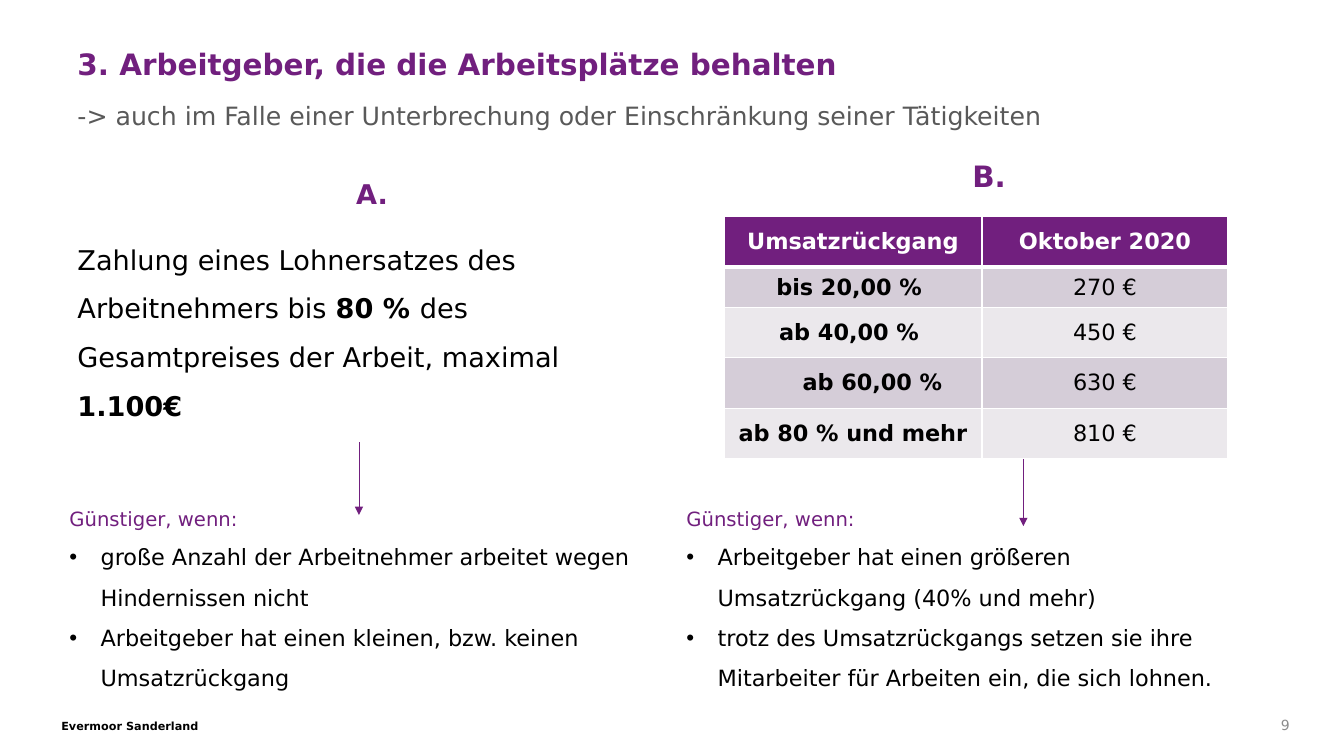
import dataclasses

import lxml.etree
import pptx
import pptx.dml.color
import pptx.enum.dml
import pptx.enum.shapes
import pptx.enum.text
import pptx.oxml.ns
import pptx.util

Inches = pptx.util.Inches
Pt = pptx.util.Pt
RGB = pptx.dml.color.RGBColor.from_string
ALIGN = pptx.enum.text.PP_ALIGN
ANCHOR = pptx.enum.text.MSO_ANCHOR
qn = pptx.oxml.ns.qn


@dataclasses.dataclass(frozen=True)
class Theme:
    font: str = "DejaVu Sans"
    purple: str = "711F7E"
    black: str = "000000"
    white: str = "FFFFFF"
    subtitle_grey: str = "595959"
    number_grey: str = "8C8C8C"
    bands: tuple = ("D5CDD8", "EBE8EC")
    heading_size: float = 21
    option_size: float = 19.4
    subtitle_size: float = 18
    body_size: float = 16
    label_size: float = 14
    number_size: float = 10
    footer_size: float = 8


THEME = Theme()

TURNOVER_TABLE = [
    ("Umsatzrückgang", "Oktober 2020"),
    ("bis 20,00 % ", "270 €"),
    ("ab 40,00 % ", "450 €"),
    ("ab 60,00 %\t", "630 €"),
    ("ab 80 % und mehr", "810 €"),
]
COLUMN_WIDTHS = (2.56, 2.44)
ROW_HEIGHTS = (0.5, 0.4, 0.5, 0.5, 0.5)

CONDITIONS = [
    (0.59, ("große Anzahl der Arbeitnehmer arbeitet wegen Hindernissen nicht",
            "Arbeitgeber hat einen kleinen, bzw. keinen Umsatzrückgang")),
    (6.71, ("Arbeitgeber hat einen größeren Umsatzrückgang (40% und mehr)",
            "trotz des Umsatzrückgangs setzen sie ihre Mitarbeiter für "
            "Arbeiten ein, die sich lohnen.")),
]


def write(frame, text, size=THEME.body_size, color=THEME.black, bold=False,
          align=ALIGN.LEFT, spacing=None, before=0, margin=0, indent=0, bullet=None):
    """Add a paragraph; text is a string or a list of (string, bold) runs."""
    paragraph = frame.paragraphs[0]
    if paragraph.runs:
        paragraph = frame.add_paragraph()
    paragraph.alignment = align
    paragraph.space_before = Pt(before)
    if spacing:
        paragraph.line_spacing = spacing
    properties = paragraph._p.get_or_add_pPr()
    properties.set("marL", str(Inches(margin)))
    properties.set("indent", str(Inches(indent)))
    if bullet:
        lxml.etree.SubElement(properties, qn("a:buFont"), typeface="Arial")
        lxml.etree.SubElement(properties, qn("a:buChar"), char=bullet)
    for words, run_bold in [(text, bold)] if isinstance(text, str) else text:
        run = paragraph.add_run()
        run.text = words
        run.font.name = THEME.font
        run.font.size = Pt(size)
        run.font.bold = run_bold
        run.font.color.rgb = RGB(color)


def add_frame(slide, left, top, width, height, anchor=ANCHOR.TOP, grow=False):
    box = slide.shapes.add_textbox(Inches(left), Inches(top), Inches(width), Inches(height))
    frame = box.text_frame
    frame.word_wrap = True
    frame.vertical_anchor = anchor
    if grow:
        frame.auto_size = pptx.enum.text.MSO_AUTO_SIZE.SHAPE_TO_FIT_TEXT
    return frame


def add_down_arrow(slide, x, top, length=0.72):
    arrow = slide.shapes.add_connector(
        pptx.enum.shapes.MSO_CONNECTOR.STRAIGHT,
        Inches(x), Inches(top), Inches(x), Inches(top + length))
    arrow.line.color.rgb = RGB(THEME.purple)
    arrow.line.width = Pt(0.5)
    lxml.etree.SubElement(arrow.line._get_or_add_ln(), qn("a:tailEnd"), type="triangle")
    lxml.etree.SubElement(arrow._element.spPr, qn("a:effectLst"))


def add_cell_borders(cell, **widths):
    """Draw white borders of 1 pt, or of the width given for a side (L, R, T, B)."""
    properties = cell._tc.get_or_add_tcPr()
    for side in "LRTB":
        line = lxml.etree.SubElement(
            properties, qn(f"a:ln{side}"), w=str(Pt(widths.get(side, 1))))
        fill = lxml.etree.SubElement(line, qn("a:solidFill"))
        lxml.etree.SubElement(fill, qn("a:srgbClr"), val=THEME.white)


def add_turnover_table(slide):
    table = slide.shapes.add_table(
        len(ROW_HEIGHTS), len(COLUMN_WIDTHS), Inches(7.18), Inches(2.15),
        Inches(sum(COLUMN_WIDTHS)), Inches(sum(ROW_HEIGHTS))).table
    for column, width in zip(table.columns, COLUMN_WIDTHS):
        column.width = Inches(width)
    for row, height in zip(table.rows, ROW_HEIGHTS):
        row.height = Inches(height)
    for r, entries in enumerate(TURNOVER_TABLE):
        header = r == 0
        for c, entry in enumerate(entries):
            cell = table.cell(r, c)
            add_cell_borders(cell, **({0: {"B": 3}, 1: {"T": 3}}.get(r, {})))
            cell.fill.solid()
            cell.fill.fore_color.rgb = RGB(THEME.purple if header else THEME.bands[(r - 1) % 2])
            cell.vertical_anchor = ANCHOR.MIDDLE
            tabbed = entry.endswith("\t")
            write(cell.text_frame, entry, color=THEME.white if header else THEME.black,
                  bold=header or c == 0, align=ALIGN.CENTER,
                  margin=0.78 if tabbed else 0, indent=-0.39 if tabbed else 0)


def add_conditions(slide, left, conditions):
    frame = add_frame(slide, left, 4.86, 5.94, 2.02, grow=True)
    write(frame, "Günstiger, wenn:", size=THEME.label_size, color=THEME.purple,
          align=ALIGN.JUSTIFY, spacing=1.5)
    for condition in conditions:
        write(frame, condition, spacing=1.5, margin=0.31, indent=-0.31, bullet="•")


def add_headings(slide):
    write(add_frame(slide, 0.67, 0.47, 12.07, 0.36, anchor=ANCHOR.MIDDLE),
          "3. Arbeitgeber, die die Arbeitsplätze behalten", size=THEME.heading_size,
          color=THEME.purple, bold=True, spacing=0.9)
    write(add_frame(slide, 0.67, 0.95, 12.07, 0.41),
          "-> auch im Falle einer Unterbrechung oder Einschränkung seiner Tätigkeiten",
          size=THEME.subtitle_size, color=THEME.subtitle_grey, before=12)


def add_options(slide):
    option_a = add_frame(slide, 0.67, 1.71, 6.04, 2.53)
    write(option_a, "A.", size=THEME.option_size, color=THEME.purple, bold=True,
          align=ALIGN.CENTER, before=12)
    write(option_a, [("Zahlung eines Lohnersatzes des Arbeitnehmers bis ", False),
                     ("80 % ", True),
                     ("des Gesamtpreises der Arbeit, maximal ", False),
                     ("1.100€", True)],
          size=THEME.option_size, spacing=1.5, before=12)
    write(add_frame(slide, 6.81, 1.52, 6, 0.49), "B.", size=THEME.heading_size,
          color=THEME.purple, bold=True, align=ALIGN.CENTER, before=12)


def add_footer(slide):
    write(add_frame(slide, 0.51, 7.09, 2.31, 0.24, grow=True), "Evermoor Sanderland",
          size=THEME.footer_size, bold=True)
    write(add_frame(slide, 11.73, 7.04, 1.16, 0.3, anchor=ANCHOR.MIDDLE), "9",
          size=THEME.number_size, color=THEME.number_grey, align=ALIGN.RIGHT)


def main():
    presentation = pptx.Presentation()
    presentation.slide_width = Inches(13.33)
    presentation.slide_height = Inches(7.5)
    slide = presentation.slides.add_slide(presentation.slide_layouts[6])
    add_footer(slide)
    add_headings(slide)
    add_options(slide)
    add_down_arrow(slide, 3.56, 4.39)
    add_down_arrow(slide, 10.15, 4.5)
    for left, conditions in CONDITIONS:
        add_conditions(slide, left, conditions)
    add_turnover_table(slide)
    presentation.save("out.pptx")


if __name__ == "__main__":
    main()
